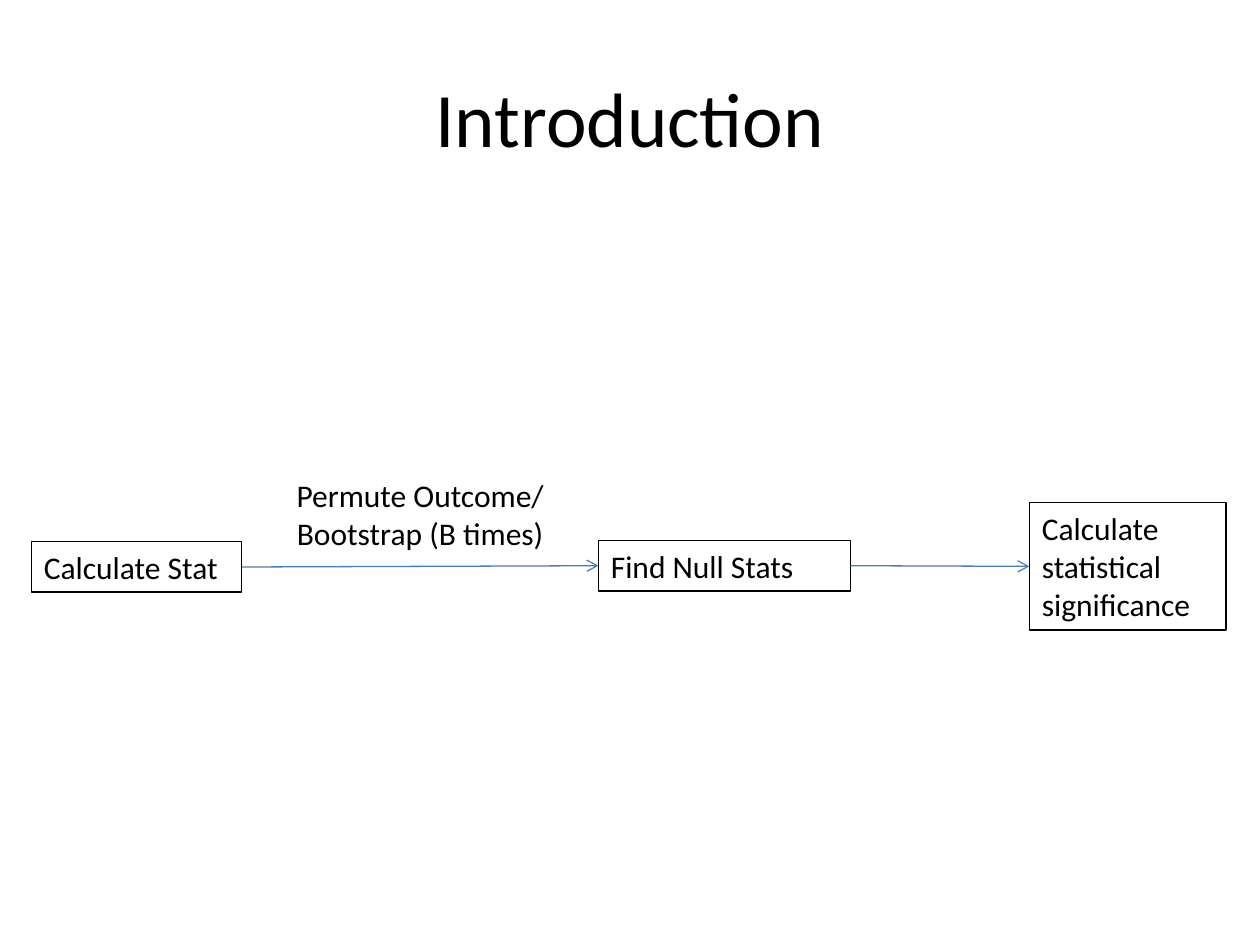
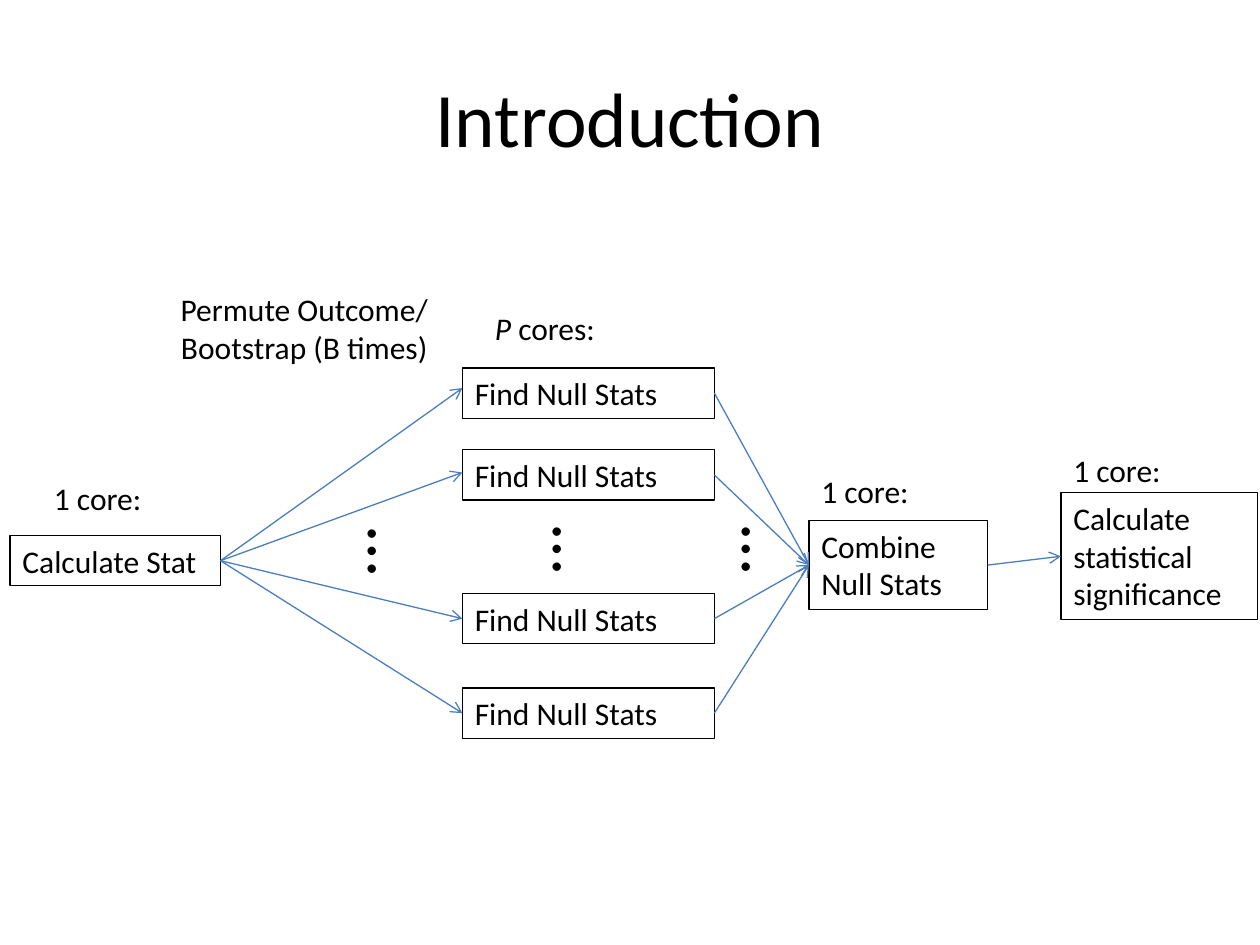
from lxml import etree
from pptx import Presentation
from pptx.dml.color import RGBColor
from pptx.enum.shapes import MSO_CONNECTOR as Connector
from pptx.enum.text import MSO_ANCHOR as Anchor, MSO_AUTO_SIZE as AutoSize, PP_ALIGN as Align
from pptx.oxml.ns import qn
from pptx.util import Inches, Pt

BLACK = RGBColor(0x00, 0x00, 0x00)
ARROW_BLUE = RGBColor(0x4B, 0x7E, 0xBC)
LINE_WIDTH = Pt(0.75)
TITLE_ONLY = 5
LEFT_SIDE, RIGHT_SIDE = 1, 3


class Deck:
    font_name = "Calibri"

    def __init__(self):
        self.deck = Presentation()
        self.deck.slide_width, self.deck.slide_height = Inches(10), Inches(7.5)
        self.page = None

    def fill_para(self, para, spans, align=Align.LEFT, size=18):
        """Fill a paragraph from (text, format values) pairs."""
        para.alignment = align
        for text, extra in spans:
            span = para.add_run()
            span.text = text
            span.font.color.rgb = BLACK
            for key, value in {"name": self.font_name, "size": Pt(size), **extra}.items():
                setattr(span.font, key, value)

    def add_page(self, title):
        self.page = self.deck.slides.add_slide(self.deck.slide_layouts[TITLE_ONLY])
        heading = self.page.shapes.title
        frame = {"left": 0.5, "top": 0.3, "width": 9, "height": 1.25}
        for key, value in frame.items():
            setattr(heading, key, Inches(value))
        heading.text_frame.vertical_anchor = Anchor.MIDDLE
        self.fill_para(heading.text_frame.paragraphs[0], [(title, {})], Align.CENTER, 44)

    def label(self, left, top, width, height, *lines, **style):
        """Add a text box; each line is a string or a list of spans."""
        box = self.page.shapes.add_textbox(*map(Inches, (left, top, width, height)))
        frame = box.text_frame
        frame.word_wrap = True
        frame.auto_size = AutoSize.SHAPE_TO_FIT_TEXT
        for index, line in enumerate(lines):
            para = frame.add_paragraph() if index else frame.paragraphs[0]
            self.fill_para(para, [(line, {})] if isinstance(line, str) else line, **style)
        return box

    def step(self, left, top, width, height, text):
        """Add an outlined box for one step of the computation."""
        box = self.label(left, top, width, height, text)
        box.line.color.rgb = BLACK
        box.line.width = LINE_WIDTH
        return box

    def permute_label(self, left, top):
        self.label(left, top, 2.17, 0.71, "Permute Outcome/", "Bootstrap (B times)",
                   align=Align.CENTER)

    def calculate_stat(self, left, top):
        return self.step(left, top, 1.67, 0.4, "Calculate Stat")

    def null_stats(self, left, top):
        return self.step(left, top, 2, 0.4, "Find Null Stats")

    def significance(self, left, top):
        return self.step(left, top, 1.56, 1.01, "Calculate statistical significance")

    def vertical_dots(self, left, top):
        self.label(left, top, 0.7, 0.77, "…", size=40).rotation = 90

    def arrow(self, source, target, end_y=None):
        """Join two steps; end_y sets a free end on the target's left side."""
        start = source.left + source.width, source.top + source.height // 2
        end_top = target.top + target.height // 2 if end_y is None else Inches(end_y)
        line = self.page.shapes.add_connector(Connector.STRAIGHT, *start, target.left, end_top)
        line.begin_connect(source, RIGHT_SIDE)
        if end_y is None:
            line.end_connect(target, LEFT_SIDE)
        line.line.color.rgb = ARROW_BLUE
        line.line.width = LINE_WIDTH
        properties = line._element.spPr
        etree.SubElement(properties.find(qn("a:ln")), qn("a:tailEnd"), type="arrow")
        etree.SubElement(properties, qn("a:effectLst"))


def add_serial_page(deck):
    deck.add_page("Introduction")
    stat = deck.calculate_stat(0.25, 4.3)
    deck.permute_label(2.25, 3.73)
    nulls = deck.null_stats(4.75, 4.29)
    result = deck.significance(8.17, 3.99)
    deck.arrow(stat, nulls)
    deck.arrow(nulls, result)


def add_parallel_page(deck):
    deck.add_page("Introduction")
    stat = deck.calculate_stat(0.08, 4.25)
    combined = deck.step(6.42, 4.13, 1.42, 0.71, "Combine Null Stats")
    result = deck.significance(8.42, 3.91)
    for top, end_y in ((2.92, 3.08), (3.57, 3.75), (4.71, None), (5.46, None)):
        nulls = deck.null_stats(3.67, top)
        deck.arrow(stat, nulls, end_y)
        deck.arrow(nulls, combined)
    deck.arrow(combined, result)
    deck.permute_label(1.33, 2.25)
    deck.label(3.83, 2.4, 1.17, 0.4, [("P", {"italic": True}), (" cores:", {})])
    for left, top in ((0.33, 3.75), (6.42, 3.7), (8.42, 3.53)):
        deck.label(left, top, 1.17, 0.4, "1 core:")
    for left, top in ((2.79, 4.05), (4.26, 4.04), (5.76, 4.04)):
        deck.vertical_dots(left, top)


def main():
    deck = Deck()
    add_serial_page(deck)
    add_parallel_page(deck)
    deck.deck.save("out.pptx")


if __name__ == "__main__":
    main()
